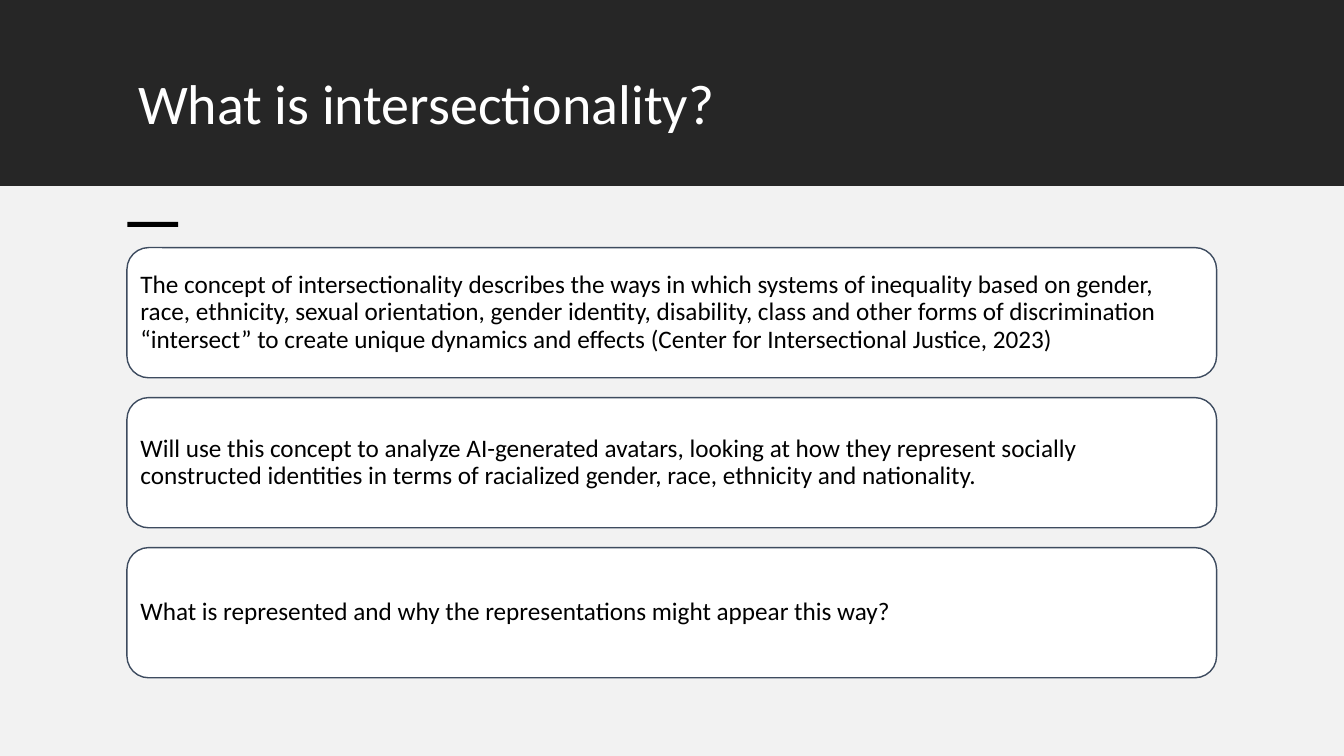
from pptx import Presentation
from pptx.dml.color import RGBColor
from pptx.enum.shapes import MSO_SHAPE as Shape
from pptx.enum.text import MSO_ANCHOR as Anchor, MSO_AUTO_SIZE as AutoSize, PP_ALIGN as Align
from pptx.util import Cm, Pt

WIDTH, HEIGHT = 33.87, 19.05
BAND_HEIGHT = 4.69
LEFT, CONTENT_WIDTH = 3.2, 27.46
CARD_TOP, CARD_HEIGHT, CARD_STEP = 6.24, 3.28, 3.78

STATEMENTS = [
    "The concept of intersectionality describes the ways in which systems of inequality "
    "based on gender, race, ethnicity, sexual orientation, gender identity, disability, "
    "class and other forms of discrimination “intersect” to create unique dynamics and "
    "effects (Center for Intersectional Justice, 2023)",
    "Will use this concept to analyze AI-generated avatars, looking at how they represent "
    "socially constructed identities in terms of racialized gender, race, ethnicity and "
    "nationality.",
    "What is represented and why the representations might appear this way?",
]


def color(hex_string):
    return RGBColor.from_string(hex_string)


def write(target, text, size=18, ink="000000", anchor=Anchor.MIDDLE, inset_x=0.18, inset_y=0.18):
    frame = target.text_frame
    frame.word_wrap = True
    frame.auto_size = AutoSize.NONE
    frame.vertical_anchor = anchor
    frame.margin_left = frame.margin_right = Cm(inset_x)
    frame.margin_top = frame.margin_bottom = Cm(inset_y)
    paragraph = frame.paragraphs[0]
    paragraph.alignment = Align.LEFT
    paragraph.line_spacing = 0.9
    run = paragraph.add_run()
    run.text = text
    run.font.name = "Calibri"
    run.font.size = Pt(size)
    run.font.color.rgb = color(ink)


def add_block(slide, left, top, width, height, fill, kind=Shape.RECTANGLE, outline=None):
    block = slide.shapes.add_shape(kind, Cm(left), Cm(top), Cm(width), Cm(height))
    block.shadow.inherit = False
    block.fill.solid()
    block.fill.fore_color.rgb = color(fill)
    if outline:
        block.line.color.rgb = color(outline)
        block.line.width = Pt(1)
    else:
        block.line.fill.background()
    return block


def add_title(slide, text):
    title = slide.shapes.title
    title.left, title.top = Cm(3.23), Cm(1.78)
    title.width, title.height = Cm(CONTENT_WIDTH), Cm(2.49)
    write(title, text, size=40, ink="FFFFFF", anchor=Anchor.TOP, inset_x=0.25, inset_y=0.13)
    # Bring the title in front of the header band
    title.element.getparent().append(title.element)


def add_card(slide, top, statement):
    card = add_block(slide, LEFT, top, CONTENT_WIDTH, CARD_HEIGHT, "FFFFFF",
                     kind=Shape.ROUNDED_RECTANGLE, outline="3D4B5F")
    write(card, statement)


def main():
    deck = Presentation()
    deck.slide_width, deck.slide_height = Cm(WIDTH), Cm(HEIGHT)
    slide = deck.slides.add_slide(deck.slide_layouts[5])

    # Header band with title
    add_block(slide, 0, 0, WIDTH, BAND_HEIGHT, "262626")
    add_title(slide, "What is intersectionality?")

    # Body background and accent dash
    add_block(slide, 0, BAND_HEIGHT, WIDTH, HEIGHT - BAND_HEIGHT, "F2F2F2")
    add_block(slide, 3.21, 5.59, 1.28, 0.13, "000000")

    # Statement cards
    for row, statement in enumerate(STATEMENTS):
        add_card(slide, CARD_TOP + row * CARD_STEP, statement)

    deck.save("out.pptx")


if __name__ == "__main__":
    main()
